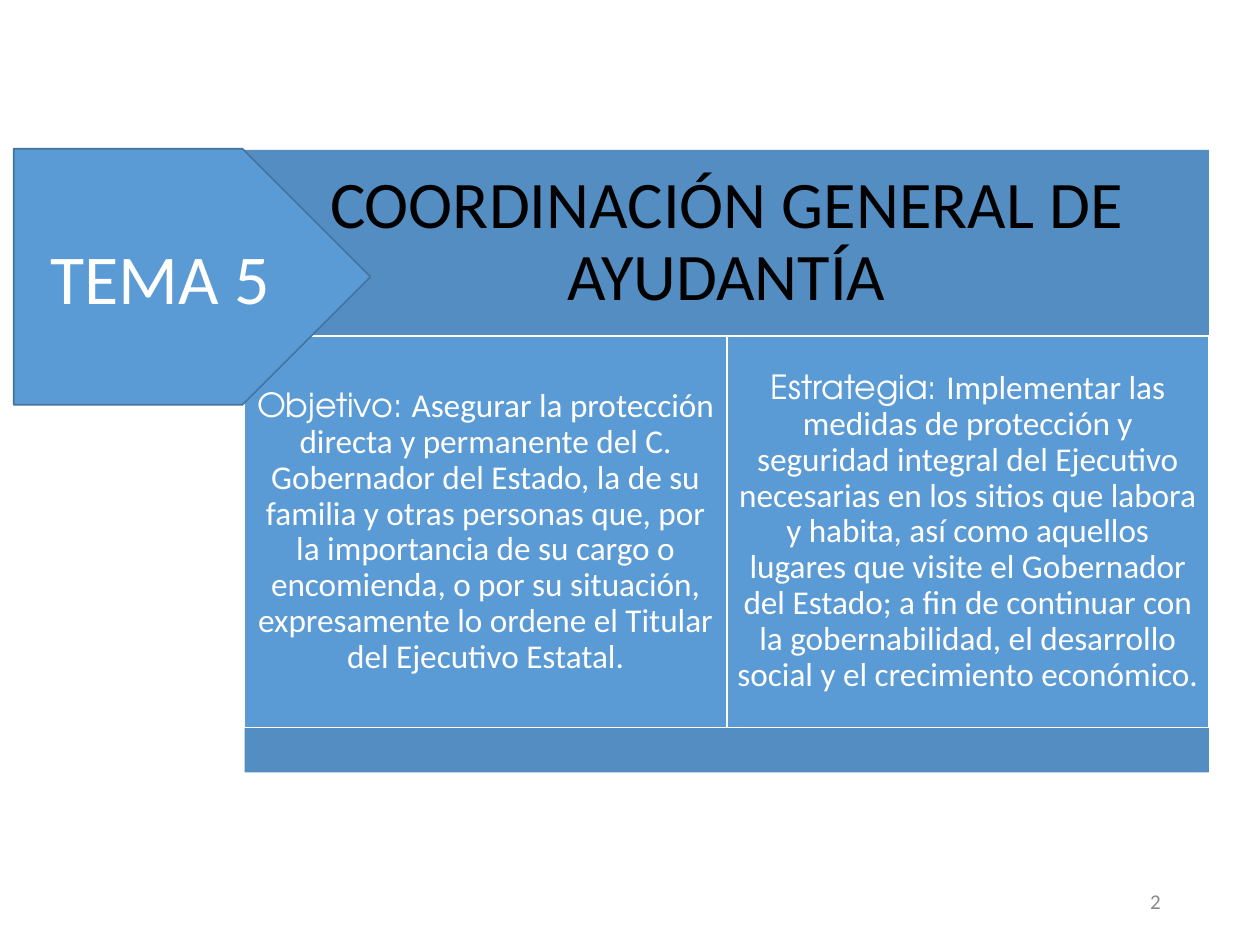
from pptx import Presentation
from pptx.dml.color import RGBColor
from pptx.enum.shapes import MSO_SHAPE
from pptx.enum.text import MSO_ANCHOR, MSO_AUTO_SIZE, PP_ALIGN
from pptx.util import Cm, Pt

BODY_FONT = "Calibri"
LABEL_FONT = "TeX Gyre Adventor"
BLUE = "5B9BD5"
DARK_BLUE = "538DC1"
OUTLINE_BLUE = "43739E"
WHITE = "FFFFFF"
BLACK = "000000"
GREY = "898989"


def color(hex_string):
    return RGBColor.from_string(hex_string)


class SlideBuilder:
    """Holds the current slide and the style of its elements."""

    def __init__(self, slide):
        self.slide = slide

    def set_text(self, shape, runs, size, hex_string, align=PP_ALIGN.CENTER,
                 inset=None, line_spacing=1.0):
        """Fill a shape with one paragraph made of (text, font) runs."""
        frame = shape.text_frame
        frame.word_wrap = True
        frame.auto_size = MSO_AUTO_SIZE.NONE
        frame.vertical_anchor = MSO_ANCHOR.MIDDLE
        if inset is not None:
            frame.margin_left = frame.margin_right = Cm(inset)
            frame.margin_top = frame.margin_bottom = Cm(inset)
        paragraph = frame.paragraphs[0]
        paragraph.alignment = align
        paragraph.line_spacing = line_spacing
        paragraph.space_before = Pt(0)
        for text, font_name in runs:
            run = paragraph.add_run()
            run.text = text
            run.font.name = font_name
            run.font.size = Pt(size)
            run.font.color.rgb = color(hex_string)

    def title(self, text, left, top, width, height):
        shape = self.slide.shapes.title
        shape.left, shape.top = Cm(left), Cm(top)
        shape.width, shape.height = Cm(width), Cm(height)
        shape.fill.solid()
        shape.fill.fore_color.rgb = color(DARK_BLUE)
        self.set_text(shape, [(text, BODY_FONT)], 38, BLACK,
                      inset=0.41, line_spacing=0.9)

    def block(self, kind, left, top, width, height, fill, line=None):
        shape = self.slide.shapes.add_shape(
            kind, Cm(left), Cm(top), Cm(width), Cm(height))
        shape.shadow.inherit = False
        shape.fill.solid()
        shape.fill.fore_color.rgb = color(fill)
        if line:
            shape.line.color.rgb = color(line)
            shape.line.width = Pt(1)
        else:
            shape.line.fill.background()
        return shape

    def column(self, label, text, left, top, width, height):
        shape = self.block(MSO_SHAPE.RECTANGLE, left, top, width, height,
                           BLUE, WHITE)
        self.set_text(shape, [(label, LABEL_FONT), (text, BODY_FONT)], 19,
                      WHITE, inset=0.2, line_spacing=0.9)

    def page_number(self, text, left, top, width, height):
        shape = self.slide.shapes.add_textbox(
            Cm(left), Cm(top), Cm(width), Cm(height))
        self.set_text(shape, [(text, BODY_FONT)], 12, GREY, PP_ALIGN.RIGHT)


def main():
    presentation = Presentation()
    presentation.slide_width = Cm(25.4)
    presentation.slide_height = Cm(19.05)
    title_only = presentation.slide_layouts[5]
    builder = SlideBuilder(presentation.slides.add_slide(title_only))

    # Panel: heading, columns and base stacked without gaps
    left, width = 4.93, 19.44
    heading_top, heading_height = 3.02, 3.76
    column_top, column_height = heading_top + heading_height, 7.9
    base_top, base_height = column_top + column_height, 0.89

    builder.title("COORDINACIÓN GENERAL DE AYUDANTÍA",
                  left, heading_top, width, heading_height)

    columns = [
        ("Objetivo: ",
         "Asegurar la protección directa y permanente del C. Gobernador del "
         "Estado, la de su familia y otras personas que, por la importancia "
         "de su cargo o encomienda, o por su situación, expresamente lo "
         "ordene el Titular del Ejecutivo Estatal."),
        ("Estrategia: ",
         "Implementar las medidas de protección y seguridad integral del "
         "Ejecutivo necesarias en los sitios que labora y habita, así como "
         "aquellos lugares que visite el Gobernador del Estado; a fin de "
         "continuar con la gobernabilidad, el desarrollo social y el "
         "crecimiento económico."),
    ]
    column_width = width / len(columns)
    for index, (label, text) in enumerate(columns):
        builder.column(label, text, left + index * column_width, column_top,
                       column_width, column_height)

    builder.block(MSO_SHAPE.RECTANGLE, left, base_top, width, base_height,
                  DARK_BLUE)

    # Topic arrow over the panel's corner
    topic = builder.block(MSO_SHAPE.PENTAGON, 0.28, 3, 7.19, 5.16,
                          BLUE, OUTLINE_BLUE)
    builder.set_text(topic, [("TEMA 5", BODY_FONT)], 40, WHITE)

    # Page number
    builder.page_number("2", 17.93, 17.65, 5.72, 1.02)

    presentation.save("out.pptx")


if __name__ == "__main__":
    main()
